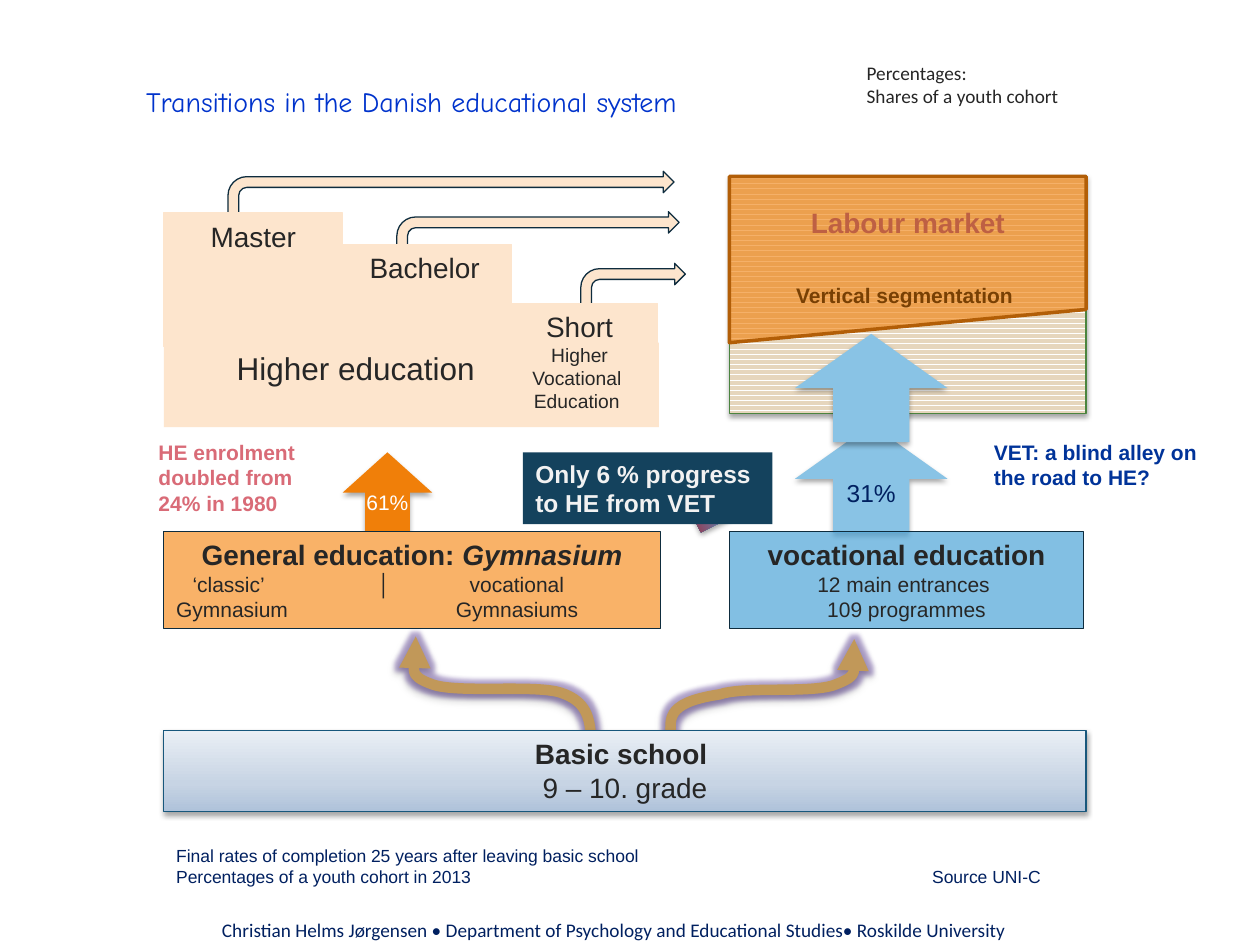
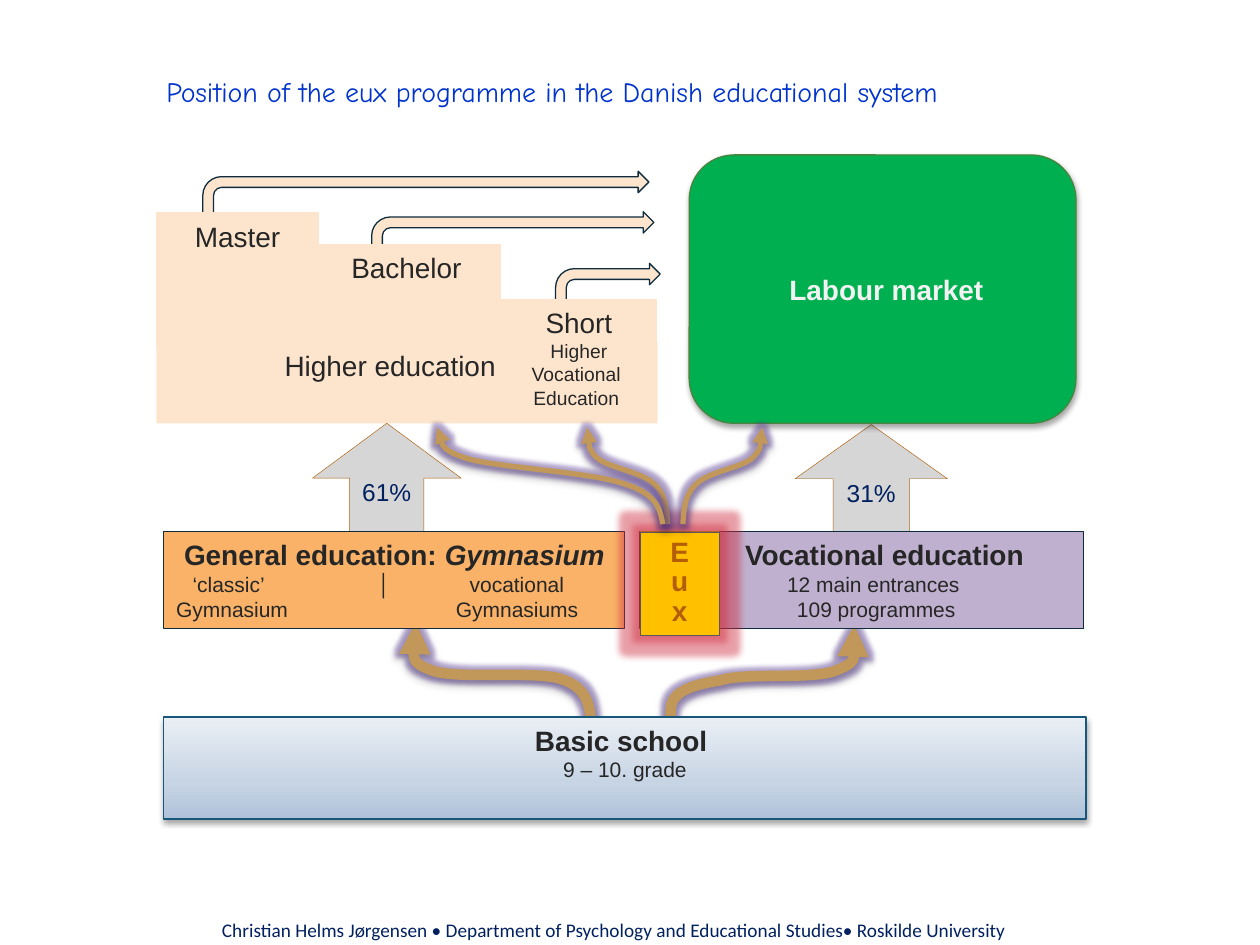
from dataclasses import dataclass
from typing import Optional, Union

from lxml.etree import SubElement
from pptx import Presentation
from pptx.dml.color import RGBColor
from pptx.enum.dml import MSO_PATTERN
from pptx.enum.shapes import MSO_SHAPE
from pptx.enum.text import MSO_ANCHOR, MSO_AUTO_SIZE, PP_ALIGN
from pptx.oxml.ns import qn
from pptx.util import Inches, Pt


@dataclass(frozen=True)
class Theme:
    body_font: str = "Arial"
    note_font: str = "Calibri"
    title_font: str = "Comic Neue"
    title: str = "0033CC"
    ink: str = "262626"
    navy: str = "002060"
    deep: str = "0E2C3E"
    light: str = "F2F2F2"
    white: str = "FFFFFF"
    peach: str = "FDE5CD"
    gymnasium: str = "F9B268"
    vocational: str = "4EA5D8"
    sky: str = "89C3E5"
    orange: str = "F07F09"
    rust: str = "B25E07"
    purple: str = "BFB0CF"
    grey: str = "D6D6D6"
    tan: str = "C19859"
    green: str = "4B843F"
    purple_glow: str = "5B3A9B"
    red_glow: str = "CF2B3E"
    large: float = 18
    heading: float = 16
    medium: float = 14
    small: float = 12
    note: float = 11
    tiny: float = 10


THEME = Theme()


@dataclass(frozen=True)
class Gradient:
    stops: tuple[tuple[int, str], ...]
    angle: int


@dataclass(frozen=True)
class Stripes:
    front: str
    back: str


@dataclass(frozen=True)
class Glow:
    color: str
    radius: float
    alpha: int


@dataclass(frozen=True)
class Line:
    text: str
    size: float = THEME.heading
    color: str = THEME.ink
    bold: bool = False
    italic_tail: str = ""
    font: str = THEME.body_font
    align: PP_ALIGN = PP_ALIGN.CENTER
    indent: float = 0
    tabs: tuple[float, ...] = ()
    spacing: Optional[float] = None


@dataclass(frozen=True)
class Block:
    left: float
    top: float
    width: float
    height: float
    lines: tuple[Line, ...] = ()
    fill: Union[str, Gradient, Stripes, None] = None
    alpha: int = 100
    outline: Optional[str] = None
    weight: float = 0.75
    kind: MSO_SHAPE = MSO_SHAPE.RECTANGLE
    adjustments: tuple[float, ...] = ()
    anchor: MSO_ANCHOR = MSO_ANCHOR.TOP
    insets: tuple[float, float] = (0.1, 0.05)
    wrap: bool = True
    shadow: bool = False
    glow: Optional[Glow] = None
    rotation: float = 0
    flipped: bool = False


Curve = tuple[tuple[float, float], ...]
EUX_CURVE: Curve = ((0, 0), (0.01, 0.16), (0.03, 0.32), (0.17, 0.42), (0.31, 0.54),
                    (0.72, 0.59), (0.86, 0.68), (1, 0.78), (0.98, 0.95), (1, 1),
                    (1.02, 1.05), (1.01, 1.04), (1, 1.01))
GYMNASIUM_CURVE: Curve = ((0, 0), (0.01, 0.16), (0.02, 0.34), (0.17, 0.43), (0.32, 0.52),
                          (0.77, 0.42), (0.91, 0.52), (1.05, 0.61), (0.99, 0.91), (1, 1),
                          (1.01, 1.08), (1.01, 1.04), (1, 1.01))
VOCATIONAL_CURVE: Curve = ((0, 0), (0.01, 0.16), (-0.05, 0.35), (0.27, 0.44), (0.41, 0.53),
                           (0.79, 0.44), (0.91, 0.55), (1.03, 0.64), (0.99, 0.92), (1, 1),
                           (1.01, 1.08), (1.01, 1.03), (1, 1.01))
SCHOOL_FILL = Gradient(((0, "AFC2DA"), (35, "C7D4E4"), (100, "EAEFF5")), 270)
PROGRESS_FILL = Gradient(((30, THEME.vocational), (80, "AB1727"), (100, "AF1425")), 180)
FOOTER = ("Christian Helms Jørgensen • Department of Psychology and Educational Studies"
          "• Roskilde University")


def add_color(parent, color: str, alpha: int = 100) -> None:
    element = SubElement(parent, qn("a:srgbClr"), val=color)
    if alpha < 100:
        SubElement(element, qn("a:alpha"), val=str(alpha * 1000))


def add_effects(shape, shadow: bool, glow: Optional[Glow]) -> None:
    shape.shadow.inherit = False
    effects = shape._element.spPr.find(qn("a:effectLst"))
    if glow:
        element = SubElement(effects, qn("a:glow"), rad=str(Pt(glow.radius)))
        add_color(element, glow.color, glow.alpha)
    if shadow:
        element = SubElement(effects, qn("a:outerShdw"), blurRad=str(Pt(3.1)),
                             dist=str(Pt(1.8)), dir="5400000", rotWithShape="0")
        add_color(element, "000000", 35)


def paint(shape, block: Block) -> None:
    fill = shape.fill
    if isinstance(block.fill, Gradient):
        fill.gradient()
        gradient = shape._element.spPr.find(qn("a:gradFill"))
        for child in list(gradient):
            gradient.remove(child)
        stops = SubElement(gradient, qn("a:gsLst"))
        for position, color in block.fill.stops:
            add_color(SubElement(stops, qn("a:gs"), pos=str(position * 1000)), color)
        SubElement(gradient, qn("a:lin"), ang=str(block.fill.angle * 60000), scaled="0")
    elif isinstance(block.fill, Stripes):
        fill.patterned()
        fill.pattern = MSO_PATTERN.DARK_HORIZONTAL
        fill.fore_color.rgb = RGBColor.from_string(block.fill.front)
        fill.back_color.rgb = RGBColor.from_string(block.fill.back)
    else:
        fill.solid()
        fill.fore_color.rgb = RGBColor.from_string(block.fill)
        if block.alpha < 100:
            color = shape._element.spPr.find(qn("a:solidFill"))[0]
            SubElement(color, qn("a:alpha"), val=str(block.alpha * 1000))
    if block.outline:
        shape.line.color.rgb = RGBColor.from_string(block.outline)
        shape.line.width = Pt(block.weight)
    else:
        shape.line.fill.background()


def write(shape, block: Block) -> None:
    frame = shape.text_frame
    frame.word_wrap = block.wrap
    frame.auto_size = MSO_AUTO_SIZE.NONE
    frame.vertical_anchor = block.anchor
    frame.margin_left = frame.margin_right = Inches(block.insets[0])
    frame.margin_top = Inches(block.insets[1])
    frame.margin_bottom = Inches(min(block.insets[1], 0.05))
    for number, line in enumerate(block.lines):
        paragraph = frame.add_paragraph() if number else frame.paragraphs[0]
        paragraph.add_run().text = line.text
        if line.italic_tail:
            run = paragraph.add_run()
            run.text = line.italic_tail
            run.font.italic = True
        paragraph.alignment = line.align
        if line.spacing:
            paragraph.line_spacing = Pt(line.spacing)
        properties = paragraph._p.get_or_add_pPr()
        if line.indent:
            properties.set("marL", str(Inches(line.indent)))
            properties.set("indent", "0")
        if line.tabs:
            tab_list = SubElement(properties, qn("a:tabLst"))
            for position in line.tabs:
                SubElement(tab_list, qn("a:tab"), pos=str(Inches(position)), algn="l")
        font = paragraph.font
        font.name, font.size, font.bold = line.font, Pt(line.size), line.bold
        font.color.rgb = RGBColor.from_string(line.color)


def draw(slide, *blocks: Block) -> None:
    for block in blocks:
        place = [Inches(value) for value in (block.left, block.top, block.width, block.height)]
        if block.fill is None:
            shape = slide.shapes.add_textbox(*place)
        else:
            shape = slide.shapes.add_shape(block.kind, *place)
            for index, value in enumerate(block.adjustments):
                shape.adjustments[index] = value
            paint(shape, block)
            add_effects(shape, block.shadow, block.glow)
            shape.rotation = block.rotation
            if block.flipped:
                for side in ("flipH", "flipV"):
                    shape._element.spPr.find(qn("a:xfrm")).set(side, "1")
        if block.lines:
            write(shape, block)


def draw_curve(slide, curve: Curve, start: tuple[float, float], tip: tuple[float, float],
               weight: float) -> None:
    points = [(Inches(start[0] + (tip[0] - start[0]) * x),
               Inches(start[1] + (tip[1] - start[1]) * y)) for x, y in curve]
    builder = slide.shapes.build_freeform(*points[0])
    builder.add_line_segments(points[1:], close=False)
    shape = builder.convert_to_shape()
    outline = next(shape._element.iter(qn("a:path")))
    segments = outline.findall(qn("a:lnTo"))
    for first in range(0, len(segments), 3):
        bezier = SubElement(outline, qn("a:cubicBezTo"))
        for segment in segments[first:first + 3]:
            bezier.append(segment[0])
            outline.remove(segment)
    shape.fill.background()
    shape.line.color.rgb = RGBColor.from_string(THEME.tan)
    shape.line.width = Pt(weight)
    SubElement(shape.line._get_or_add_ln(), qn("a:tailEnd"), type="triangle")
    add_effects(shape, True, Glow(THEME.purple_glow, 5, 40))


def add_titled_slide(presentation, title: str, left: float, top: float):
    slide = presentation.slides.add_slide(presentation.slide_layouts[5])
    shape = slide.shapes.title
    shape.left, shape.top, shape.width, shape.height = map(Inches, (left, top, 7.64, 0.37))
    write(shape, Block(left, top, 7.64, 0.37, (
        Line(title, color=THEME.title, font=THEME.title_font, align=PP_ALIGN.LEFT),)))
    draw(slide, Block(0.25, 7.24, 9.25, 0.26, (
        Line(FOOTER, THEME.note, THEME.navy, font=THEME.note_font),)))
    return slide


def step_block(left: float, top: float, width: float, height: float, *lines: Line) -> Block:
    return Block(left, top, width, height, lines, THEME.peach, outline=THEME.peach)


def draw_higher_education(slide, shift: float, master: tuple[float, float],
                          bachelor: tuple[float, float], short: tuple[float, float],
                          base: Block) -> None:
    for left, top, width in ((4.61, 2.09, 0.83), (3.15, 1.68, 2.24), (1.81, 1.36, 3.54)):
        draw(slide, Block(left + shift, top, width, 0.34, fill=THEME.peach,
                          outline=THEME.deep, kind=MSO_SHAPE.BENT_ARROW))
    draw(slide, step_block(bachelor[0], 1.94, bachelor[1], 0.91, Line("Bachelor")),
         step_block(master[0], 1.69, master[1], 1.06, Line("Master")), base,
         step_block(3.98, short[0], short[1], 0.93, Line("Short"),
                    *(Line(word, THEME.note) for word in ("Higher", "Vocational ", "Education "))))


def draw_schools(slide, gymnasium_width: float, vocational: Block, school_top: float,
                 school_height: float, grade_size: float) -> None:
    shift = school_top - 5.8
    draw_curve(slide, VOCATIONAL_CURVE, (5.32, 5.85 + shift), (6.78, 5.08 + shift), 6)
    draw_curve(slide, GYMNASIUM_CURVE, (4.69, 5.83 + shift), (3.3, 5.06 + shift), 6)
    kinds = dict(size=THEME.small, align=PP_ALIGN.LEFT)
    draw(slide, Block(1.3, 4.22, gymnasium_width, 0.77, (
        Line("General education: ", bold=True, italic_tail="Gymnasium"),
        Line("\t‘classic’\t│\tvocational", tabs=(0.13, 1.6, 2.33), **kinds),
        Line("Gymnasium\tGymnasiums", tabs=(2.22,), **kinds)),
        THEME.gymnasium, outline=THEME.deep), vocational,
        Block(1.3, school_top, 7.32, school_height, (
            Line("Basic school ", bold=True), Line("9 – 10. grade", grade_size)),
            SCHOOL_FILL, outline="18577C", shadow=True))


def share_arrow(left: float, top: float, width: float, height: float, fill: str,
                *lines: Line, **options) -> Block:
    return Block(left, top, width, height, lines, fill, kind=MSO_SHAPE.UP_ARROW,
                 anchor=MSO_ANCHOR.MIDDLE, **options)


def text_lines(*texts: str, **style) -> tuple[Line, ...]:
    return tuple(Line(text, align=PP_ALIGN.LEFT, **style) for text in texts)


def build_transitions(presentation) -> None:
    slide = add_titled_slide(presentation, "Transitions in the Danish educational system", 1.06, 0.62)
    draw_higher_education(
        slide, 0, (1.3, 1.42), (2.68, 1.38), (2.41, 1.24),
        Block(1.3, 2.72, 3.93, 0.67, text_lines("Higher education", size=THEME.large, indent=0.48),
              THEME.peach))
    draw(slide, share_arrow(6.31, 3.37, 1.21, 0.86, THEME.sky,
                            Line("31%", THEME.medium, THEME.navy), shadow=True),
         share_arrow(2.72, 3.59, 0.71, 0.63, THEME.orange, Line("61%", THEME.small, THEME.white),
                     adjustments=(0.5, 0.507), insets=(0, 0), shadow=True))
    draw_schools(slide, 3.94, Block(5.79, 4.22, 2.81, 0.77, (
        Line("vocational education", bold=True), Line("12 main entrances ", THEME.small),
        Line("109 programmes", THEME.small)), THEME.vocational, 70, THEME.deep), 5.8, 0.64,
        THEME.heading)
    draw(slide,
         Block(1.3, 6.66, 7.29, 0.44, text_lines(
             "Final rates of completion 25 years after leaving basic school",
             "Percentages of a youth cohort in 2013\tSource UNI-C",
             size=THEME.tiny, color=THEME.navy, tabs=(6,))),
         share_arrow(5.29, 3.59, 0.5, 0.61, PROGRESS_FILL, rotation=333.7, shadow=True),
         Block(4.15, 3.59, 1.98, 0.57, text_lines(
             "Only 6 % progress", "to HE from VET", size=THEME.medium, color=THEME.light,
             bold=True), "14425D", wrap=False),
         Block(6.78, 0.44, 1.73, 0.47, text_lines(
             "Percentages:", "Shares of a youth cohort", size=THEME.note,
             font=THEME.note_font), wrap=False),
         Block(1.16, 3.44, 1.34, 0.71, text_lines(
             "HE enrolment", "doubled from", "24% in 1980", size=THEME.small,
             color="D96B77", bold=True), wrap=False),
         Block(5.79, 1.39, 2.83, 1.89, (Line("Labour market", color="7030A0", bold=True),),
               Stripes("E6D6BD", THEME.white), outline=THEME.green, insets=(0.1, 0.24), shadow=True),
         Block(7.79, 3.44, 2.01, 0.5, text_lines(
             "VET: a blind alley on the road to HE?", size=THEME.small, color="003399", bold=True)),
         Block(5.79, 1.4, 2.83, 1.32, fill=THEME.orange, alpha=61, outline=THEME.rust, weight=2,
               kind=MSO_SHAPE.FLOWCHART_MANUAL_INPUT, flipped=True),
         Block(6.22, 2.19, 1.93, 0.3, text_lines(
             "Vertical segmentation", size=THEME.small, color="784004", bold=True), wrap=False),
         share_arrow(6.31, 2.65, 1.21, 0.86, THEME.sky, shadow=True))


def build_eux_position(presentation) -> None:
    slide = add_titled_slide(
        presentation, "Position of the eux programme in the Danish educational system", 1.22, 0.54)
    draw_higher_education(
        slide, -0.2, (1.24, 1.29), (2.48, 1.49), (2.38, 1.23),
        Block(1.24, 2.72, 3.98, 0.64, text_lines("Higher education", indent=0.92), THEME.peach))
    for share, left, top, width, height in (("31%", 6.31, 3.37, 1.21, 0.86),
                                            ("61%", 2.48, 3.36, 1.18, 0.87)):
        draw(slide, share_arrow(left, top, width, height, THEME.grey,
                                Line(share, THEME.medium, THEME.navy),
                                outline=THEME.rust, weight=0.25))
    draw_schools(slide, 3.66, Block(5.08, 4.22, 3.52, 0.77, (
        Line("Vocational education", bold=True, indent=0.36),
        Line("12 main entrances ", THEME.small, indent=0.23),
        Line("109 programmes", THEME.small, indent=0.23)), THEME.purple, outline=THEME.deep),
        5.69, 0.81, THEME.small)
    draw(slide,
         Block(5.47, 1.23, 3.07, 2.13, (Line(" Labour market", color=THEME.light, bold=True),),
               "00B050", outline=THEME.green, kind=MSO_SHAPE.ROUNDED_RECTANGLE,
               anchor=MSO_ANCHOR.MIDDLE, shadow=True),
         Block(5.08, 4.22, 0.63, 0.82, tuple(
             Line(letter, color="B45F07", bold=True, spacing=17) for letter in "Eux"),
             "FFC000", outline="595959", weight=0.25, glow=Glow(THEME.red_glow, 8, 45)))
    for start, tip in ((5.42, 6.05), (5.3, 4.66), (5.26, 3.47)):
        draw_curve(slide, EUX_CURVE, (start, 4.16), (tip, 3.4), 3)


def main() -> None:
    presentation = Presentation()
    presentation.slide_width, presentation.slide_height = Inches(10), Inches(7.5)
    build_transitions(presentation)
    build_eux_position(presentation)
    presentation.save("out.pptx")


if __name__ == "__main__":
    main()
